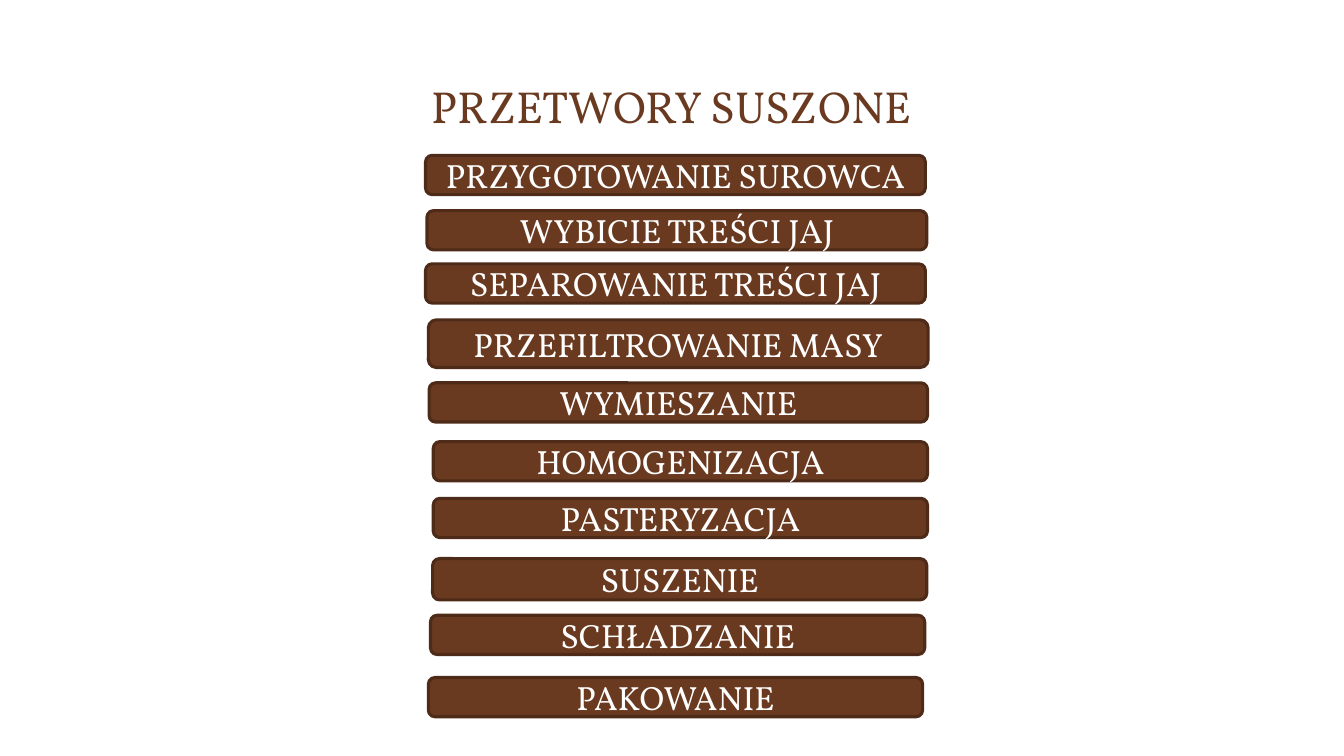
"""Build a slide listing the steps for making dried egg products."""
from dataclasses import dataclass

import pptx
import pptx.dml.color
import pptx.enum.shapes
import pptx.enum.text
import pptx.slide
import pptx.text.text
import pptx.util


@dataclass(frozen=True)
class Theme:
    face: str = "Vollkorn"
    brown: str = "6A3A20"
    edge: str = "4E2B18"
    white: str = "FFFFFF"
    head: float = 32
    label: float = 24
    stroke: float = 2.25


@dataclass(frozen=True)
class Step:
    label: str
    left: float
    top: float
    width: float = 353
    height: float = 28


THEME = Theme()
STEPS = [
    Step("PRZYGOTOWANIE SUROWCA", 304, 111, 357),
    Step("WYBICIE TREŚCI JAJ", 305, 150.5, 357),
    Step("SEPAROWANIE TREŚCI JAJ", 304, 188.5, 357),
    Step("PRZEFILTROWANIE MASY", 306, 228.5, 357, 34),
    Step("WYMIESZANIE", 306.5, 273.5, 356),
    Step("HOMOGENIZACJA", 309.5, 315.5),
    Step("PASTERYZACJA", 309.5, 356),
    Step("SUSZENIE", 309, 399, height=29.5),
    Step("SCHŁADZANIE", 307.5, 439.5),
    Step("PAKOWANIE", 306, 484),
]


def tint(code: str) -> pptx.dml.color.RGBColor:
    return pptx.dml.color.RGBColor.from_string(code)


def write(frame: pptx.text.text.TextFrame, text: str, size: float, hue: str,
          anchor: pptx.enum.text.MSO_ANCHOR) -> None:
    frame.text = text
    frame.word_wrap = True
    frame.auto_size = pptx.enum.text.MSO_AUTO_SIZE.NONE
    frame.vertical_anchor = anchor
    line = frame.paragraphs[0]
    line.alignment = pptx.enum.text.PP_ALIGN.CENTER
    line.font.name = THEME.face
    line.font.size = pptx.util.Pt(size)
    line.font.color.rgb = tint(hue)


def draw_title(slide: pptx.slide.Slide) -> None:
    title = slide.shapes.title
    title.left, title.top = pptx.util.Pt(96), pptx.util.Pt(34)
    title.width, title.height = pptx.util.Pt(767.5), pptx.util.Pt(64)
    write(title.text_frame, "PRZETWORY SUSZONE", THEME.head, THEME.brown,
          pptx.enum.text.MSO_ANCHOR.BOTTOM)


def draw_step(slide: pptx.slide.Slide, step: Step) -> None:
    bar = slide.shapes.add_shape(
        pptx.enum.shapes.MSO_SHAPE.ROUNDED_RECTANGLE,
        pptx.util.Pt(step.left), pptx.util.Pt(step.top),
        pptx.util.Pt(step.width), pptx.util.Pt(step.height))
    bar.shadow.inherit = False
    bar.fill.solid()
    bar.fill.fore_color.rgb = tint(THEME.brown)
    bar.line.color.rgb = tint(THEME.edge)
    bar.line.width = pptx.util.Pt(THEME.stroke)
    write(bar.text_frame, step.label, THEME.label, THEME.white,
          pptx.enum.text.MSO_ANCHOR.MIDDLE)


def main() -> None:
    deck = pptx.Presentation()
    deck.slide_width = pptx.util.Pt(960)
    deck.slide_height = pptx.util.Pt(540)
    slide = deck.slides.add_slide(deck.slide_layouts[5])
    draw_title(slide)
    for step in STEPS:
        draw_step(slide, step)
    deck.save("out.pptx")


if __name__ == "__main__":
    main()
